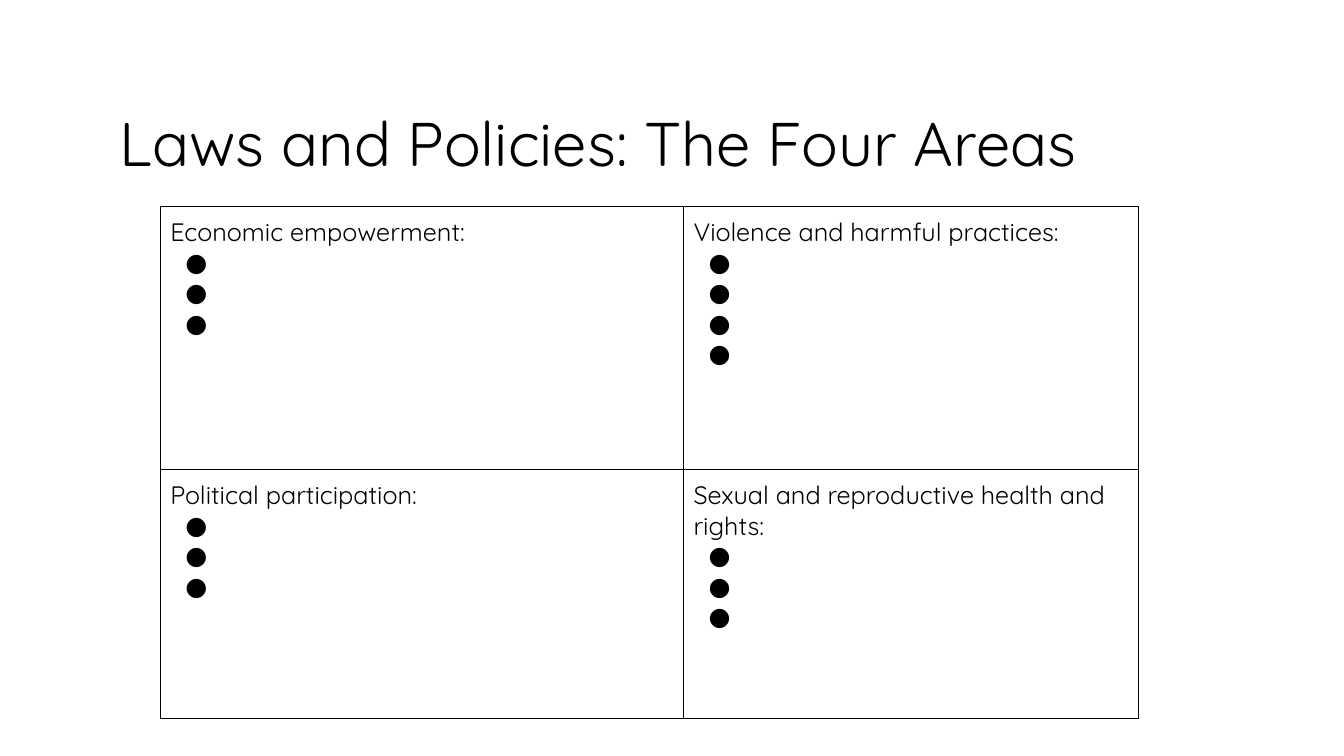
"""Build a slide with a title above a two-by-two grid of policy areas."""
from typing import NamedTuple

from lxml.etree import SubElement
from pptx import Presentation
from pptx.dml.color import RGBColor
from pptx.enum.shapes import MSO_SHAPE
from pptx.enum.text import MSO_ANCHOR, PP_ALIGN
from pptx.oxml.ns import qn
from pptx.util import Inches, Pt

COLORS = {"ink": "000000", "paper": "FFFFFF"}
FONT = "Quicksand"
COLUMN_EDGES = (1.59, 6.78, 11.29)
ROW_EDGES = (2.05, 4.66, 7.13)


class Area(NamedTuple):
    heading: str
    bullets: int
    column: int
    row: int


AREAS = (
    Area("Economic empowerment:", 3, 0, 0),
    Area("Violence and harmful practices:", 4, 1, 0),
    Area("Political participation:", 3, 0, 1),
    Area("Sexual and reproductive health and rights:", 3, 1, 1),
)


def color(name: str) -> RGBColor:
    return RGBColor.from_string(COLORS[name])


def write(p, text: str, *, size: float = 18, spacing: float = 1.0, bullet: str = "") -> None:
    p.alignment = PP_ALIGN.LEFT
    p.line_spacing = spacing
    r = p.add_run()
    r.text = text
    r.font.name = FONT
    r.font.size = Pt(size)
    r.font.color.rgb = color("ink")
    if bullet:
        props = p._p.get_or_add_pPr()
        props.set("marL", str(Inches(0.5)))
        props.set("indent", str(Inches(-0.35)))
        SubElement(props, qn("a:buFont"), typeface=FONT)
        SubElement(props, qn("a:buChar"), char=bullet)


def add_title(slide, text: str) -> None:
    sp = slide.shapes.title
    sp.left, sp.top, sp.width, sp.height = map(Inches, (1.09, 1.07, 11.37, 1.19))
    tf = sp.text_frame
    tf.vertical_anchor = MSO_ANCHOR.TOP
    write(tf.paragraphs[0], text, size=44, spacing=0.9)


def add_area(slide, area: Area) -> None:
    left, right = COLUMN_EDGES[area.column:area.column + 2]
    top, bottom = ROW_EDGES[area.row:area.row + 2]
    sp = slide.shapes.add_shape(
        MSO_SHAPE.RECTANGLE,
        Inches(left), Inches(top), Inches(right - left), Inches(bottom - top),
    )
    sp.shadow.inherit = False
    sp.fill.background()
    sp.line.color.rgb = color("ink")
    sp.line.width = Pt(0.75)
    tf = sp.text_frame
    tf.word_wrap = True
    tf.vertical_anchor = MSO_ANCHOR.TOP
    tf.margin_left = tf.margin_right = tf.margin_top = tf.margin_bottom = Inches(0.1)
    write(tf.paragraphs[0], area.heading)
    for _ in range(area.bullets):
        write(tf.add_paragraph(), " ", bullet="●")


def main() -> None:
    prs = Presentation()
    prs.slide_width, prs.slide_height = Inches(13.33), Inches(7.5)
    slide = prs.slides.add_slide(prs.slide_layouts[5])
    slide.background.fill.solid()
    slide.background.fill.fore_color.rgb = color("paper")
    add_title(slide, "Laws and Policies: The Four Areas")
    for area in AREAS:
        add_area(slide, area)
    prs.save("out.pptx")


if __name__ == "__main__":
    main()
